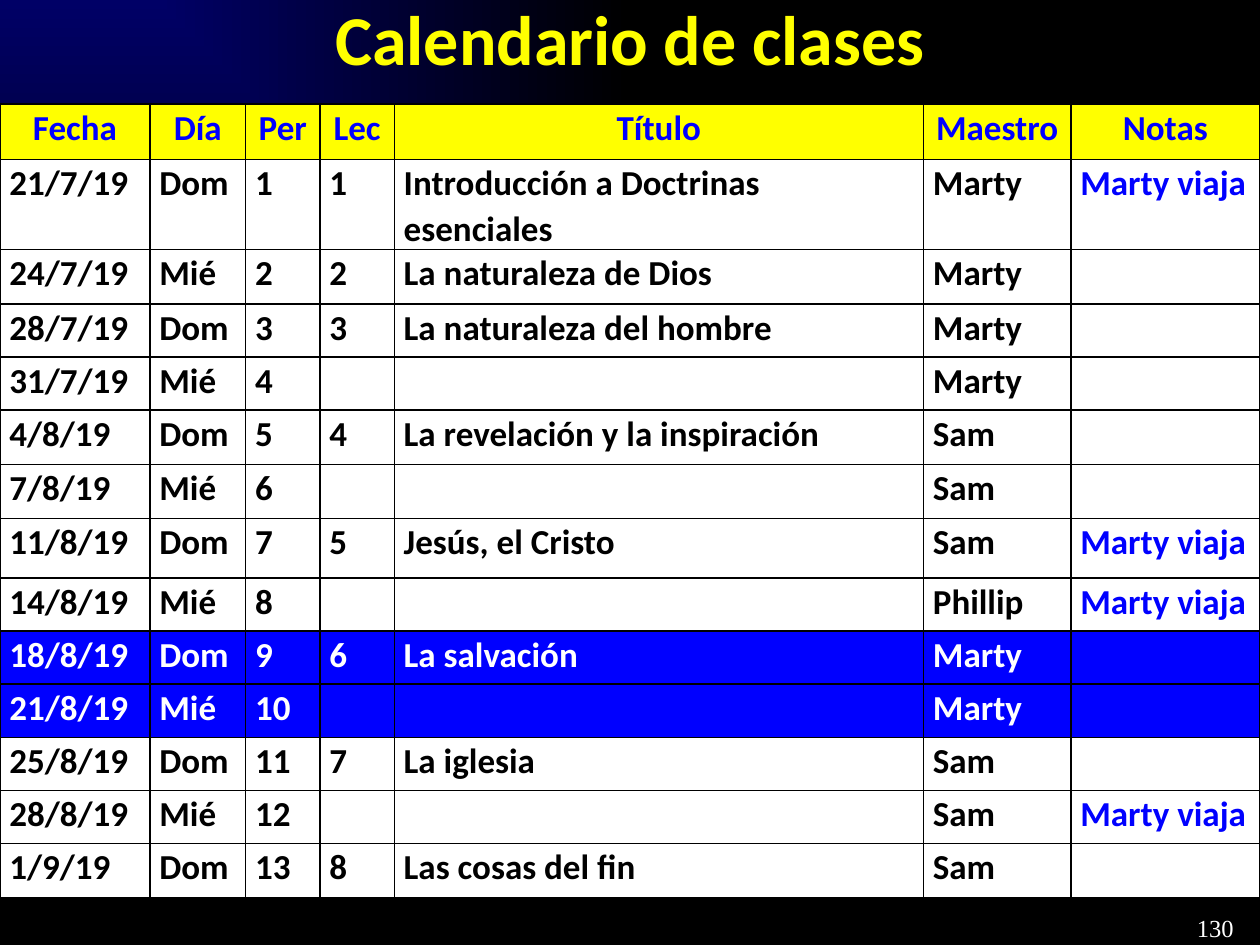
from dataclasses import dataclass

from lxml import etree
from pptx import Presentation
from pptx import util as u
from pptx.dml.color import RGBColor
from pptx.enum import text
from pptx.oxml import ns, parse_xml


@dataclass(frozen=True)
class Theme:
    navy: str = "000066"
    black: str = "000000"
    white: str = "FFFFFF"
    blue: str = "0000FF"
    gold: str = "FFFF00"
    sans: str = "Calibri"
    serif: str = "Times New Roman"
    head: int = 40
    body: int = 20
    foot: int = 14


@dataclass(frozen=True)
class Box:
    left: float
    top: float
    width: float
    height: float

    def cut(self, x, y, w, h):
        return Box(self.left + x * self.width, self.top + y * self.height,
                   w * self.width, h * self.height)

    def place(self):
        return [u.Emu(round(v)) for v in (self.left, self.top, self.width, self.height)]


T = Theme()
COLS = (1.19, 0.76, 0.59, 0.59, 4.2, 1.17, 1.5)
ROWS = (0.44, 0.71, 0.43, 0.42, 0.42, 0.43, 0.43, 0.47, 0.42, 0.42, 0.42, 0.42, 0.42, 0.43)
HEAD = ("Fecha", "Día", "Per", "Lec", "Título", "Maestro", "Notas")
TRIP = "Marty viaja"
CLASSES = (
    ("21/7/19", "Introducción a Doctrinas esenciales", "Marty", TRIP),
    ("24/7/19", "La naturaleza de Dios", "Marty", ""),
    ("28/7/19", "La naturaleza del hombre", "Marty", ""),
    ("31/7/19", "", "Marty", ""),
    ("4/8/19", "La revelación y la inspiración", "Sam", ""),
    ("7/8/19", "", "Sam", ""),
    ("11/8/19", "Jesús, el Cristo", "Sam", TRIP),
    ("14/8/19", "", "Phillip", TRIP),
    ("18/8/19", "La salvación", "Marty", ""),
    ("21/8/19", "", "Marty", ""),
    ("25/8/19", "La iglesia", "Sam", ""),
    ("28/8/19", "", "Sam", TRIP),
    ("1/9/19", "Las cosas del fin", "Sam", ""),
)
MARKED = (9, 10)


def apply(thing, form):
    for key, value in form.items():
        setattr(thing, key, value)


def write(frame, words, size, tint, face=T.sans, bold=True, **form):
    para = frame.paragraphs[0]
    style = {"size": u.Pt(size), "name": face, "bold": bold}
    apply(para, form)
    apply(para.font, style)
    if words:
        run = para.add_run()
        run.text = words
        apply(run.font, style)
        run.font.color.rgb = RGBColor.from_string(tint)


def backdrop(slide):
    fill = slide.background.fill
    fill.solid()
    props = slide.background._cSld.bg.bgPr
    fade = parse_xml(
        f'<a:gradFill {ns.nsdecls("a")} rotWithShape="0"><a:gsLst>'
        f'<a:gs pos="0"><a:srgbClr val="{T.navy}"/></a:gs>'
        f'<a:gs pos="100000"><a:srgbClr val="{T.black}"/></a:gs></a:gsLst>'
        '<a:path path="rect"><a:fillToRect r="100000" b="100000"/></a:path></a:gradFill>')
    props.replace(props.find(ns.qn("a:solidFill")), fade)


def title(slide, box):
    frame = slide.shapes.add_textbox(*box.place()).text_frame
    apply(frame, {"word_wrap": True, "vertical_anchor": text.MSO_ANCHOR.MIDDLE,
                  "margin_top": 0, "margin_bottom": 0})
    write(frame, "Calendario de clases", T.head, T.gold, alignment=text.PP_ALIGN.CENTER)


def number(slide, box):
    frame = slide.shapes.add_textbox(*box.place()).text_frame
    frame.word_wrap = True
    write(frame, "130", T.foot, T.white, T.serif, False)


def edges(cell):
    props = cell._tc.get_or_add_tcPr()
    for spot, side in enumerate(("lnL", "lnR", "lnT", "lnB")):
        line = etree.Element(ns.qn(f"a:{side}"), w=str(int(u.Pt(1))))
        fill = etree.SubElement(line, ns.qn("a:solidFill"))
        etree.SubElement(fill, ns.qn("a:srgbClr"), val=T.black)
        props.insert(spot, line)


def lessons():
    count = 0
    for turn, (date, topic, guide, note) in enumerate(CLASSES, 1):
        count += bool(topic)
        day = "Dom" if turn % 2 else "Mié"
        yield date, day, str(turn), str(count) if topic else "", topic, guide, note


def colors(row, col):
    if row == 0:
        return T.gold, T.blue
    if row in MARKED:
        return T.blue, T.white
    return T.white, T.blue if col == len(COLS) - 1 else T.black


def schedule(slide, box):
    table = slide.shapes.add_table(len(ROWS), len(COLS), *box.place()).table
    apply(table, {"first_row": False, "horz_banding": False})
    for col, share in zip(table.columns, COLS):
        col.width = u.Emu(round(box.width * share / sum(COLS)))
    for row, share in zip(table.rows, ROWS):
        row.height = u.Emu(round(box.height * share / sum(ROWS)))
    for row, line in enumerate((HEAD, *lessons())):
        side = text.PP_ALIGN.LEFT if row else text.PP_ALIGN.CENTER
        for col, words in enumerate(line):
            cell = table.cell(row, col)
            fill, ink = colors(row, col)
            apply(cell, {"margin_left": u.Pt(5.4), "margin_right": u.Pt(5.4),
                         "margin_top": 0, "margin_bottom": 0})
            cell.fill.solid()
            cell.fill.fore_color.rgb = RGBColor.from_string(fill)
            edges(cell)
            write(cell.text_frame, words, T.body, ink, alignment=side, line_spacing=1.07)


def main():
    deck = Presentation()
    apply(deck, {"slide_width": u.Inches(10), "slide_height": u.Inches(7.5)})
    slide = deck.slides.add_slide(deck.slide_layouts[6])
    page = Box(0, 0, deck.slide_width, deck.slide_height)
    backdrop(slide)
    title(slide, page.cut(0, 0, 1, 0.08))
    number(slide, page.cut(0.94, 0.96, 0.06, 0.04))
    schedule(slide, page.cut(0, 0.11, 1, 0.84))
    deck.save("out.pptx")


if __name__ == "__main__":
    main()
